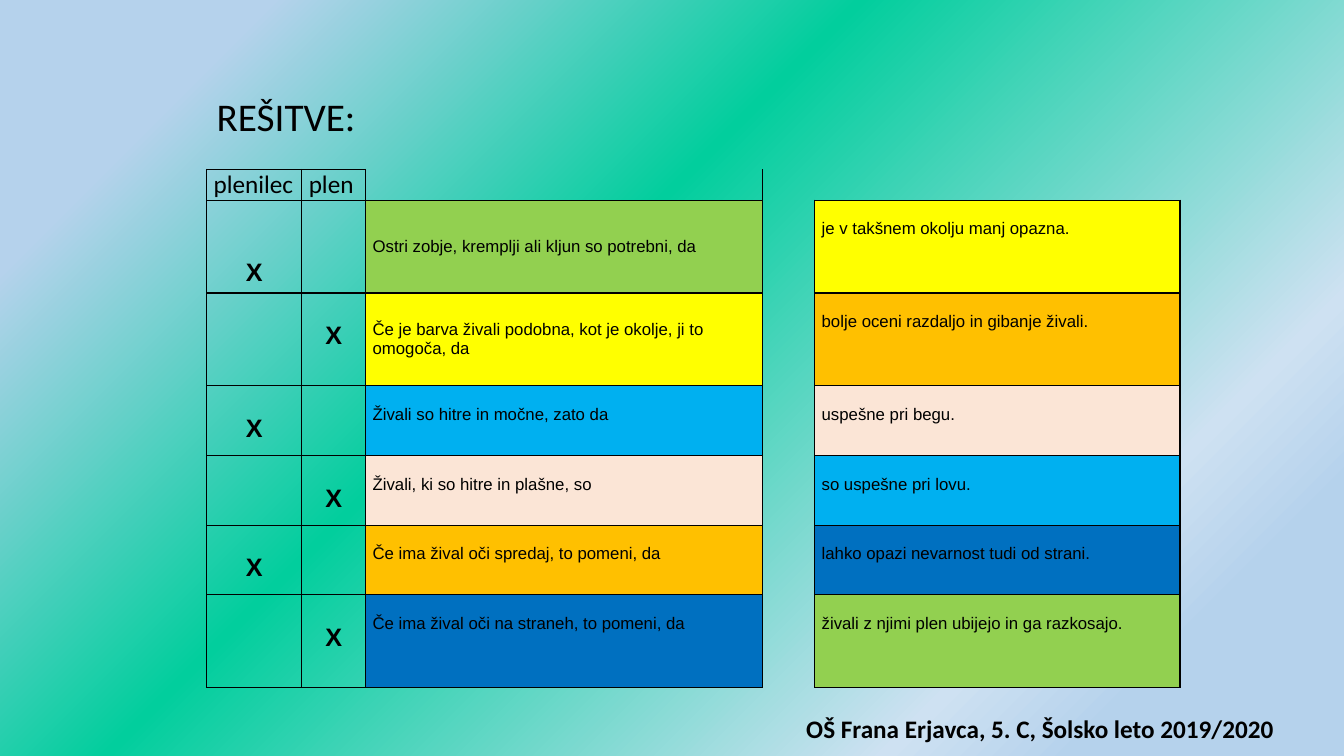
from dataclasses import dataclass

from lxml import etree
from pptx import Presentation
from pptx.dml.color import RGBColor
from pptx.enum import text as t
from pptx.oxml import ns
from pptx.util import Pt


@dataclass(frozen=True)
class Theme:
    ink: str = "000000"
    green: str = "92D050"
    yellow: str = "FFFF00"
    orange: str = "FFC000"
    sky: str = "00B0F0"
    peach: str = "FBE5D6"
    blue: str = "0070C0"
    backdrop: tuple = ((13, "B5D2EC"), (22, "CEE1F2"), (59, "02CE9D"), (87, "B5D2EC"))
    heading_font: str = "Calibri"
    body_font: str = "Arial"
    title_size: int = 28
    label_size: int = 18
    body_size: int = 12


THEME = Theme()
NO_STYLE_NO_GRID = "{2D5ABB26-0587-4C30-8999-92F81FD0307C}"
COLUMN_WIDTHS = (68, 45.6, 283.6, 37.2, 261)
PREDATOR, PREY, START, GAP, ENDING = range(5)
TALL, SHORT, HEADER = 66.3, 49.8, 22
MARK_LINE, BODY_LINE = 20.7, 13.8

# height, marked column, lines above the mark, start, its colour, ending, its colour
ANSWERS = (
    (TALL, PREDATOR, 2, "Ostri zobje, kremplji ali kljun so potrebni, da", THEME.green,
     "je v takšnem okolju manj opazna.", THEME.yellow),
    (TALL, PREY, 1, "Če je barva živali podobna, kot je okolje, ji to omogoča, da", THEME.yellow,
     "bolje oceni razdaljo in gibanje živali.", THEME.orange),
    (SHORT, PREDATOR, 1, "Živali so hitre in močne, zato da", THEME.sky,
     "uspešne pri begu.", THEME.peach),
    (SHORT, PREY, 1, "Živali, ki so hitre in plašne, so", THEME.peach,
     "so uspešne pri lovu.", THEME.sky),
    (SHORT, PREDATOR, 1, "Če ima žival oči spredaj, to pomeni, da", THEME.orange,
     "lahko opazi nevarnost tudi od strani.", THEME.blue),
    (TALL, PREY, 1, "Če ima žival oči na straneh, to pomeni, da", THEME.blue,
     "živali z njimi plen ubijejo in ga razkosajo.", THEME.green),
)


def add_element(parent, tag, **attributes):
    return etree.SubElement(parent, ns.qn(tag), attributes)


def write(frame, words, size, font=THEME.heading_font, bold=False, align=t.PP_ALIGN.LEFT):
    frame.word_wrap = True
    paragraph = frame.paragraphs[0]
    paragraph.alignment = align
    run = paragraph.add_run()
    run.text = words
    run.font.name = font
    run.font.size = Pt(size)
    run.font.bold = bold
    run.font.color.rgb = RGBColor.from_string(THEME.ink)


def place(shape, left, top, width, height):
    shape.left, shape.top = Pt(left), Pt(top)
    shape.width, shape.height = Pt(width), Pt(height)


def paint_background(slide):
    """Spread the backdrop colours from the bottom right corner."""
    fill = slide.background.fill
    fill.gradient()
    gradient = slide.element.find(".//" + ns.qn("a:gradFill"))
    for child in list(gradient):
        gradient.remove(child)
    stops = add_element(gradient, "a:gsLst")
    for percent, colour in THEME.backdrop:
        stop = add_element(stops, "a:gs", pos=str(percent * 1000))
        add_element(stop, "a:srgbClr", val=colour)
    spread = add_element(gradient, "a:path", path="circle")
    add_element(spread, "a:fillToRect", l="100000", t="100000")
    add_element(gradient, "a:tileRect", r="-100000", b="-100000")


def format_cell(cell, sides="", colour=None):
    """Draw the named sides (from L, R, T, B, in that order) and fill the cell."""
    properties = cell._tc.get_or_add_tcPr()
    for side in sides:
        line = add_element(properties, "a:ln" + side, w=str(Pt(1)))
        add_element(add_element(line, "a:solidFill"), "a:srgbClr", val=THEME.ink)
    if colour:
        cell.fill.solid()
        cell.fill.fore_color.rgb = RGBColor.from_string(colour)
    else:
        cell.fill.background()
    cell.margin_left = cell.margin_right = Pt(5)
    cell.margin_top = cell.margin_bottom = 0


def add_answers(slide):
    heights = [HEADER] + [answer[0] for answer in ANSWERS]
    frame = slide.shapes.add_table(
        len(heights), len(COLUMN_WIDTHS), Pt(147.6), Pt(121),
        Pt(sum(COLUMN_WIDTHS)), Pt(sum(heights)))
    table = frame.table
    table.first_row = table.horz_banding = False
    table._tbl.tblPr.find(ns.qn("a:tableStyleId")).text = NO_STYLE_NO_GRID
    for column, width in zip(table.columns, COLUMN_WIDTHS):
        column.width = Pt(width)
    for row, height in zip(table.rows, heights):
        row.height = Pt(height)

    for column, sides in enumerate(("LRTB", "LRTB", "LB", "", "B")):
        format_cell(table.cell(0, column), sides)
    for column, label in ((PREDATOR, "plenilec"), (PREY, "plen")):
        write(table.cell(0, column).text_frame, label, THEME.label_size)

    for row, (height, marked, lead, start, start_colour, ending, ending_colour) in enumerate(ANSWERS, 1):
        colours = (None, None, start_colour, None, ending_colour)
        for column, sides in enumerate(("LRTB", "LRTB", "LTB", "", "LRTB")):
            format_cell(table.cell(row, column), sides, colours[column])
        mark = table.cell(row, marked)
        mark.margin_top = Pt(lead * MARK_LINE)
        write(mark.text_frame, "X", THEME.label_size, THEME.body_font, True, t.PP_ALIGN.CENTER)
        for column, words in ((START, start), (ENDING, ending)):
            cell = table.cell(row, column)
            if column == START and row <= 2:
                cell.vertical_anchor = t.MSO_ANCHOR.MIDDLE
            else:
                cell.margin_top = Pt(BODY_LINE)
            write(cell.text_frame, words, THEME.body_size, THEME.body_font)
    table.cell(0, GAP).merge(table.cell(len(ANSWERS), GAP))


def main():
    deck = Presentation()
    deck.slide_width, deck.slide_height = Pt(960), Pt(540)
    slide = deck.slides.add_slide(deck.slide_layouts[5])
    paint_background(slide)
    add_answers(slide)

    title = slide.shapes.title
    place(title, 147.6, 62, 286.6, 41)
    title.text_frame.vertical_anchor = t.MSO_ANCHOR.TOP
    write(title.text_frame, "REŠITVE:", THEME.title_size)

    school = slide.shapes.add_textbox(Pt(568.8), Pt(506.2), Pt(378), Pt(28.8))
    write(school.text_frame, "OŠ Frana Erjavca, 5. C, Šolsko leto 2019/2020",
          THEME.label_size, bold=True)

    deck.save("out.pptx")


if __name__ == "__main__":
    main()
